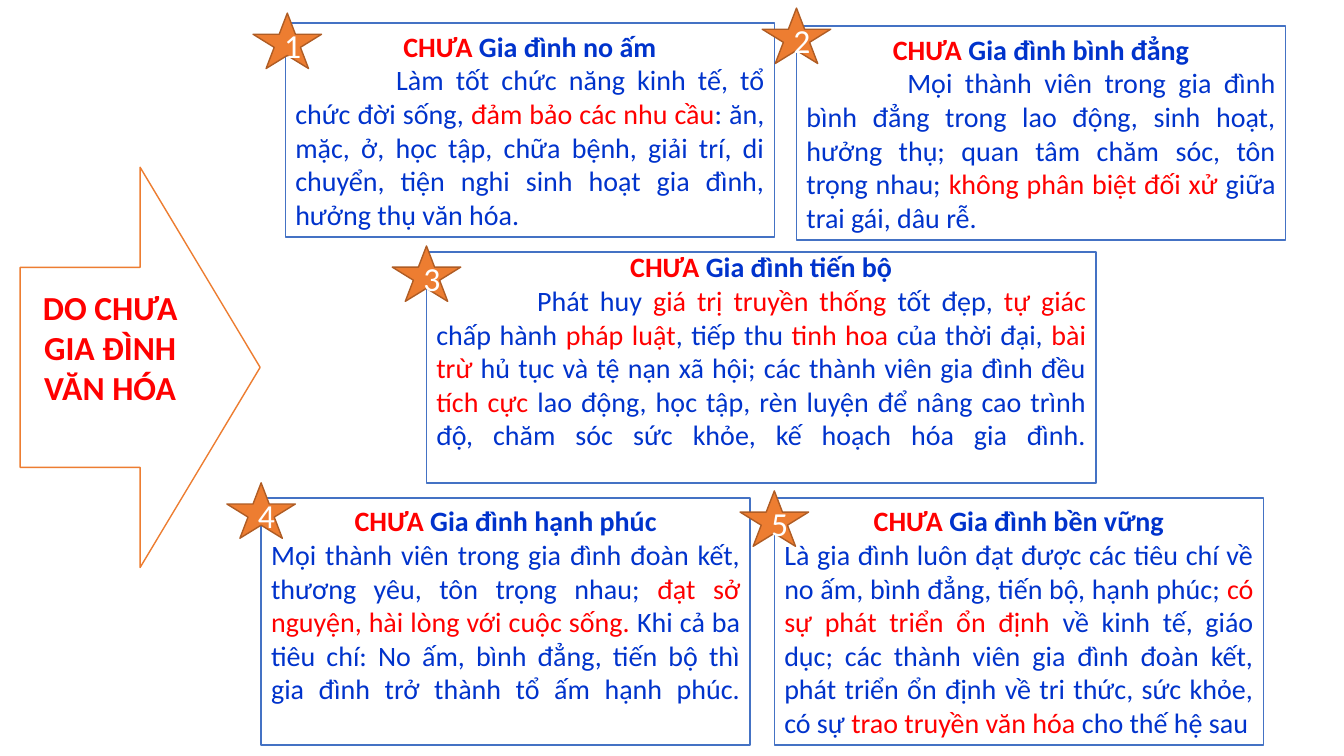
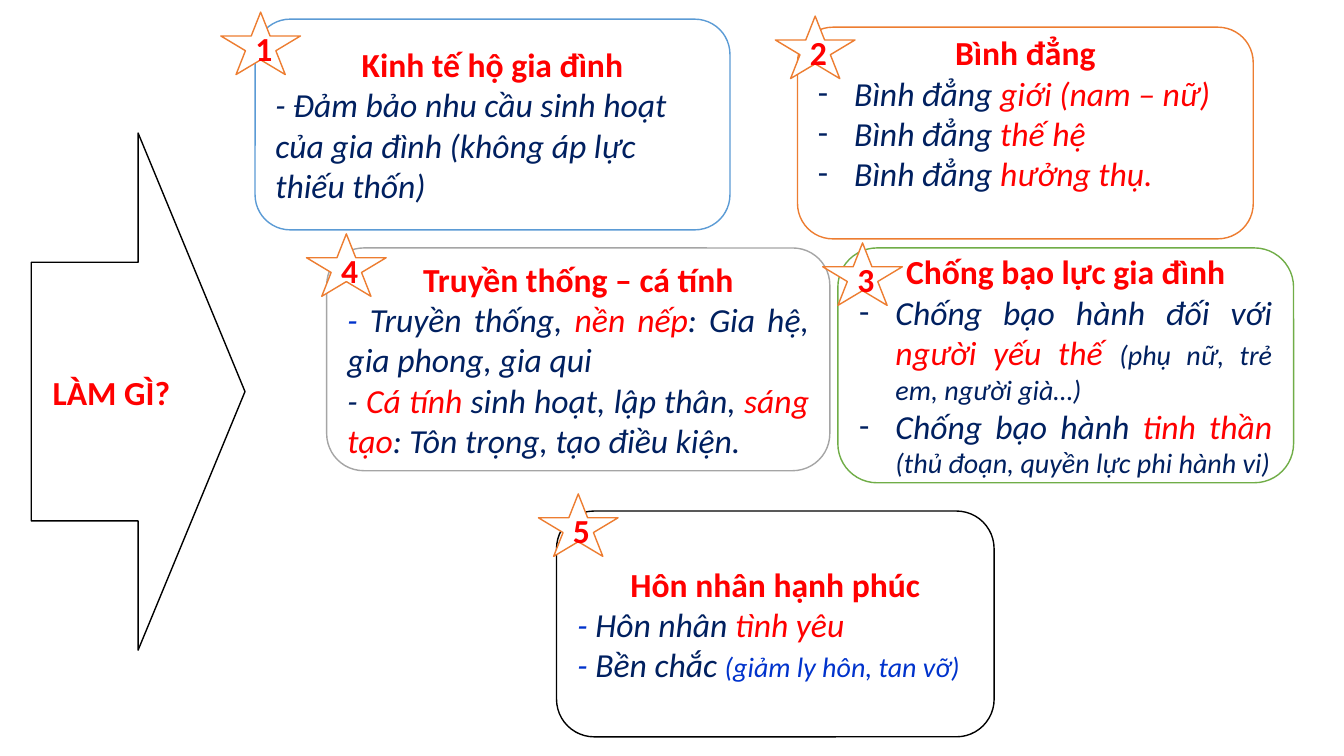
from lxml.etree import SubElement
from pptx import Presentation
from pptx.dml.color import RGBColor
from pptx.enum.shapes import MSO_SHAPE
from pptx.enum.text import MSO_ANCHOR, PP_ALIGN
from pptx.oxml.ns import qn
from pptx.util import Inches, Pt

ARROW = MSO_SHAPE.RIGHT_ARROW
RECTANGLE = MSO_SHAPE.RECTANGLE
ROUNDED = MSO_SHAPE.ROUNDED_RECTANGLE
STAR = MSO_SHAPE.STAR_5_POINT
MIDDLE = MSO_ANCHOR.MIDDLE
LEFT, CENTER, JUSTIFY = PP_ALIGN.LEFT, PP_ALIGN.CENTER, PP_ALIGN.JUSTIFY

WHITE, BLACK, RED = "FFFFFF", "000000", "FF0000"
BLUE, NAVY, ORANGE = "0033CC", "002060", "ED7D31"
FRAME_BLUE, STAR_EDGE = "4472C4", "AF5C24"
LINE_HEIGHT = 0.4  # one line of 24 point text, in inches
HANG = 0.36  # hanging indent of bullets, in inches

# Character formats, by name
TEXT = {
    "label": dict(size=24, color=RED, bold=True),
    "number": dict(size=24, color=WHITE),
    "lack": dict(size=20, color=RED, bold=True),
    "heading": dict(size=20, color=BLUE, bold=True),
    "plain": dict(size=20, color=BLUE),
    "stress": dict(size=20, color=RED),
    "dash": dict(size=24, color=BLUE, italic=True),
    "navy": dict(size=24, color=NAVY, italic=True),
    "red": dict(size=24, color=RED, italic=True),
    "note": dict(size=20, color=NAVY, italic=True),
    "blue note": dict(size=20, color=BLUE, italic=True),
}

# Paragraph formats, by name: alignment, left margin, first-line indent, bullet
PARAGRAPH = {
    "center": (CENTER, 0, 0, False),
    "left": (LEFT, 0, 0, False),
    "justify": (JUSTIFY, 0, 0, False),
    "opening": (JUSTIFY, 0, 1, False),
    "bullet": (LEFT, HANG, -HANG, True),
    "wide bullet": (JUSTIFY, HANG, -HANG, True),
}


def rgb(value):
    return RGBColor.from_string(value)


class Deck:
    """Holds the shared style and the current slide."""

    font_name = "Calibri"

    def __init__(self):
        self.presentation = Presentation()
        self.presentation.slide_width = Inches(13.33)
        self.presentation.slide_height = Inches(7.5)
        self.slide = None

    def new_slide(self):
        layout = self.presentation.slide_layouts[6]
        self.slide = self.presentation.slides.add_slide(layout)

    def shape(self, kind, place, line, paragraphs, fill=WHITE, lift=0):
        """Draw a preset shape; lift leaves that many free lines below its text."""
        shape = self.slide.shapes.add_shape(kind, *map(Inches, place))
        shape.shadow.inherit = False
        shape.fill.solid()
        shape.fill.fore_color.rgb = rgb(fill)
        shape.line.color.rgb = rgb(line)
        shape.line.width = Pt(1)
        frame = shape.text_frame
        frame.word_wrap = True
        frame.vertical_anchor = MIDDLE
        frame.margin_bottom = Inches(0.05 + lift * LINE_HEIGHT)
        for index, (style, runs) in enumerate(paragraphs):
            paragraph = frame.add_paragraph() if index else frame.paragraphs[0]
            self.format_paragraph(paragraph, style)
            for name, text in runs:
                self.run(paragraph, name, text)

    def format_paragraph(self, paragraph, style):
        alignment, margin, indent, bullet = PARAGRAPH[style]
        paragraph.alignment = alignment
        properties = paragraph._p.get_or_add_pPr()
        properties.set("marL", str(Inches(margin)))
        properties.set("indent", str(Inches(indent)))
        if bullet:
            SubElement(properties, qn("a:buFont"), typeface=self.font_name)
            SubElement(properties, qn("a:buChar"), char="-")

    def run(self, paragraph, name, text):
        style = TEXT[name]
        run = paragraph.add_run()
        run.text = text.rstrip("\n")
        values = {"name": self.font_name, "size": Pt(style["size"]),
                  "bold": style.get("bold", False), "italic": style.get("italic", False)}
        for attribute, value in values.items():
            setattr(run.font, attribute, value)
        run.font.color.rgb = rgb(style["color"])
        if text.endswith("\n"):  # a closing break stretches the last line
            size = str(style["size"] * 100)
            paragraph.add_line_break()
            SubElement(paragraph._p[-1], qn("a:rPr"), sz=size)
            SubElement(paragraph._p, qn("a:endParaRPr"), sz=size)

    def arrow(self, place, line, text, lift=0):
        self.shape(ARROW, place, line, [("center", [("label", text)])], lift=lift)

    def stars(self, corners, size, fill, line, style):
        for number, corner in enumerate(corners, 1):
            self.shape(STAR, (*corner, *size), line,
                       [("center", [(style, str(number))])], fill)


# Slide 1: place, heading, paragraph style and text of each frame
CAUSES = [
    ((2.83, 0.23, 4.85, 2.12), "Gia đình no ấm", "opening", [
        ("plain", "Làm tốt chức năng kinh tế, tổ chức đời sống, "),
        ("stress", "đảm bảo các nhu cầu"),
        ("plain", ": ăn, mặc, ở, học tập, chữa bệnh, giải trí, di chuyển, "
                  "tiện nghi sinh hoạt gia đình, hưởng thụ văn hóa.")]),
    ((7.9, 0.26, 4.85, 2.12), "Gia đình bình đẳng", "opening", [
        ("plain", "Mọi thành viên trong gia đình bình đẳng trong lao động, sinh hoạt, "
                  "hưởng thụ; quan tâm chăm sóc, tôn trọng nhau; "),
        ("stress", "không phân biệt đối xử "),
        ("plain", "giữa trai gái, dâu rễ.")]),
    ((4.23, 2.5, 6.64, 2.29), "Gia đình tiến bộ", "opening", [
        ("plain", "Phát huy "),
        ("stress", "giá trị truyền thống "),
        ("plain", "tốt đẹp, "),
        ("stress", "tự giác "),
        ("plain", "chấp hành "),
        ("stress", "pháp luật"),
        ("plain", ", tiếp thu "),
        ("stress", "tinh hoa "),
        ("plain", "của thời đại, "),
        ("stress", "bài trừ "),
        ("plain", "hủ tục và tệ nạn xã hội; các thành viên gia đình đều "),
        ("stress", "tích cực "),
        ("plain", "lao động, học tập, rèn luyện để nâng cao trình độ, "
                  "chăm sóc sức khỏe, kế hoạch hóa gia đình.\n")]),
    ((2.59, 4.94, 4.85, 2.45), "Gia đình hạnh phúc", "justify", [
        ("plain", "Mọi thành viên trong gia đình đoàn kết, thương yêu, tôn trọng nhau; "),
        ("stress", "đạt sở nguyện, hài lòng với cuộc sống. "),
        ("plain", "Khi cả ba tiêu chí: No ấm, bình đẳng, tiến bộ thì gia đình "
                  "trở thành tổ ấm hạnh phúc.\n")]),
    ((7.68, 4.94, 4.85, 2.45), "Gia đình bền vững", "justify", [
        ("plain", "Là gia đình luôn đạt được các tiêu chí về no ấm, bình đẳng, "
                  "tiến bộ, hạnh phúc; "),
        ("stress", "có sự phát triển ổn định "),
        ("plain", "về kinh tế, giáo dục; các thành viên gia đình đoàn kết, "
                  "phát triển ổn định về tri thức, sức khỏe, có sự "),
        ("stress", "trao truyền văn hóa "),
        ("plain", "cho thế hệ sau")]),
]
CAUSE_STARS = [(2.51, 0.13), (7.56, 0.08), (3.89, 2.44), (2.25, 4.79), (7.34, 4.87)]

# Slide 2: place, line colour, free lines, heading and paragraphs of each frame
ACTIONS = [
    ((2.53, 0.19, 4.71, 2.09), "5B9BD5", 0, "Kinh tế hộ gia đình", [
        ("left", [("navy", "- Đảm bảo nhu cầu sinh hoạt của gia đình "
                           "(không áp lực thiếu thốn)")])]),
    ((7.91, 0.27, 4.52, 2.1), ORANGE, 1, "Bình đẳng", [
        ("bullet", [("navy", "Bình đẳng "), ("red", aspect)])
        for aspect in ("giới (nam – nữ)", "thế hệ", "hưởng thụ.")]),
    ((8.31, 2.46, 4.52, 2.33), "70AD47", 0, "Chống bạo lực gia đình", [
        ("wide bullet", [("navy", "Chống bạo hành đối với "), ("red", "người yếu thế "),
                         ("note", "(phụ nữ, trẻ em, người già…)")]),
        ("wide bullet", [("navy", "Chống bạo hành "), ("red", "tinh thần "),
                         ("note", "(thủ đoạn, quyền lực phi hành vi)")])]),
    ((3.24, 2.46, 4.99, 2.21), "A5A5A5", 0, "Truyền thống – cá tính", [
        ("justify", [("dash", "- "), ("navy", "Truyền thống, "), ("red", "nền nếp"),
                     ("navy", ": Gia hệ, gia phong, gia qui")]),
        ("justify", [("navy", "- "), ("red", "Cá tính "),
                     ("navy", "sinh hoạt, lập thân, "), ("red", "sáng tạo"),
                     ("navy", ": Tôn trọng, tạo điều kiện.")])]),
    ((5.52, 5.07, 4.34, 2.24), BLACK, 0, "Hôn nhân hạnh phúc", [
        ("justify", [("dash", "- "), ("navy", "Hôn nhân "), ("red", "tình yêu")]),
        ("justify", [("dash", "- "), ("navy", "Bền chắc "),
                     ("blue note", "(giảm ly hôn, tan vỡ)")])]),
]
ACTION_STARS = [(2.19, 0.12), (7.69, 0.16), (8.16, 2.41), (3.04, 2.32), (5.34, 4.9)]


def main():
    deck = Deck()

    # Slide 1: causes
    deck.new_slide()
    deck.arrow((0.2, 1.66, 2.38, 3.97), ORANGE, "DO CHƯA GIA ĐÌNH VĂN HÓA", lift=1)
    for place, heading, style, runs in CAUSES:
        title = ("center", [("lack", "CHƯA "), ("heading", heading)])
        deck.shape(RECTANGLE, place, FRAME_BLUE, [title, (style, runs)])
    deck.stars(CAUSE_STARS, (0.68, 0.55), ORANGE, STAR_EDGE, "number")

    # Slide 2: actions
    deck.new_slide()
    deck.arrow((0.31, 1.32, 2.12, 5.13), BLACK, "LÀM GÌ?")
    for place, line, lift, heading, paragraphs in ACTIONS:
        title = ("center", [("label", heading)])
        deck.shape(ROUNDED, place, line, [title, *paragraphs], lift=lift)
    deck.stars(ACTION_STARS, (0.79, 0.62), WHITE, ORANGE, "label")

    deck.presentation.save("out.pptx")


if __name__ == "__main__":
    main()
